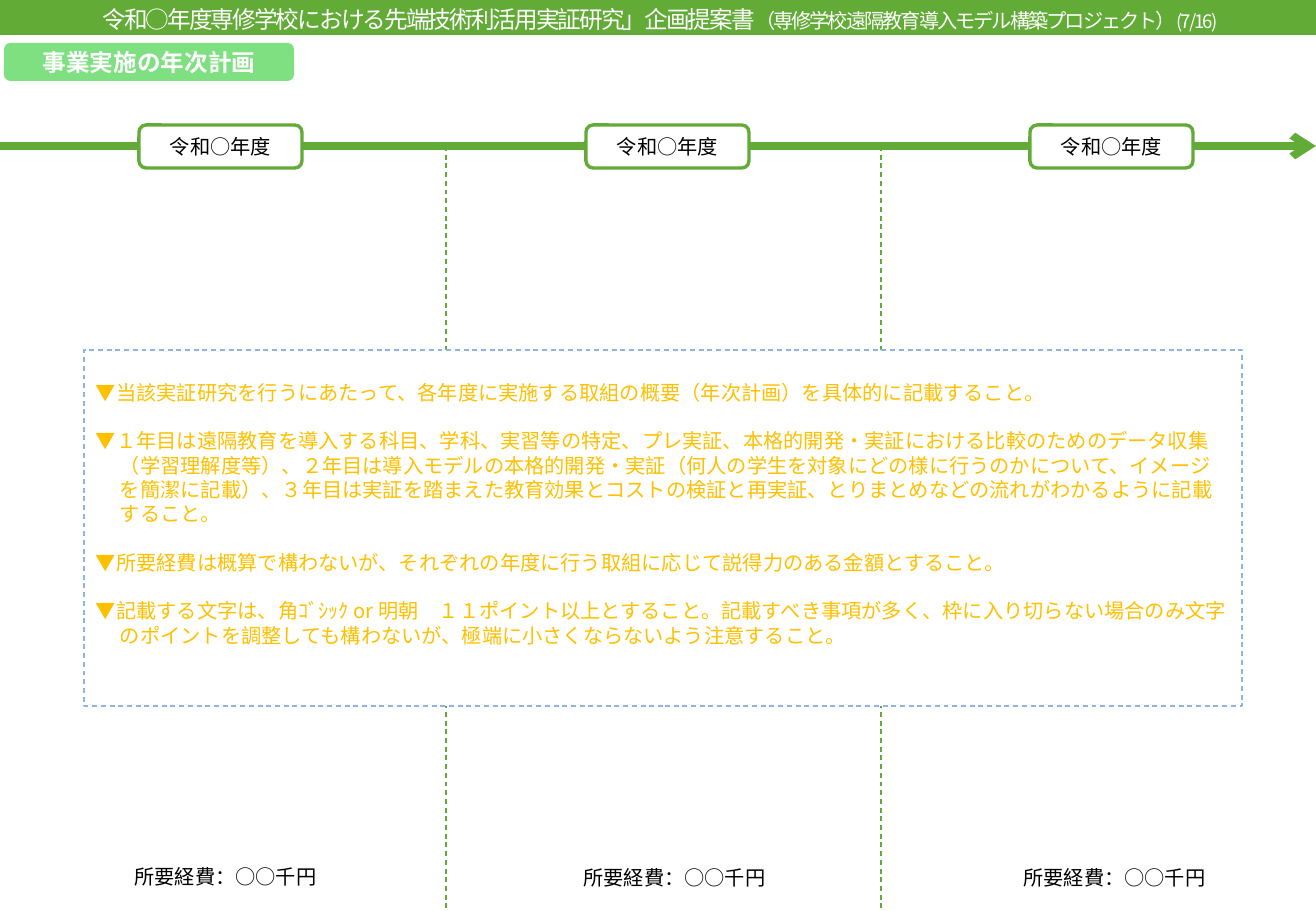
from dataclasses import dataclass

from lxml.etree import SubElement
from pptx import Presentation
from pptx.dml.color import RGBColor
from pptx.enum.dml import MSO_LINE
from pptx.enum.shapes import MSO_CONNECTOR, MSO_SHAPE
from pptx.enum.text import MSO_ANCHOR, PP_ALIGN
from pptx.oxml.ns import qn
from pptx.util import Emu, Pt

PX = 7526
WIDTH, HEIGHT = 1316, 911
AXIS_Y = 146
# left edges of the year label and the cost line, top of the cost line, label font
YEARS = [(139, 4, 858, "Roboto"), (586, 453, 859, "Roboto"),
         (1030, 893, 859, "Noto Sans CJK JP")]
DIVIDERS = [446, 881]
NOTES = [
    "▼当該実証研究を行うにあたって、各年度に実施する取組の概要（年次計画）を具体的に記載すること。",
    "▼１年目は遠隔教育を導入する科目、学科、実習等の特定、プレ実証、本格的開発・実証における比較のためのデータ収集"
    "（学習理解度等）、２年目は導入モデルの本格的開発・実証（何人の学生を対象にどの様に行うのかについて、イメージ"
    "を簡潔に記載）、３年目は実証を踏まえた教育効果とコストの検証と再実証、とりまとめなどの流れがわかるように記載"
    "すること。",
    "▼所要経費は概算で構わないが、それぞれの年度に行う取組に応じて説得力のある金額とすること。",
    "▼記載する文字は、角ｺﾞｼｯｸ or 明朝　１１ポイント以上とすること。記載すべき事項が多く、枠に入り切らない場合のみ"
    "文字のポイントを調整しても構わないが、極端に小さくならないよう注意すること。",
]


@dataclass(frozen=True)
class Theme:
    green: str = "62AB37"
    light_green: str = "7EE081"
    blue: str = "8EB4E3"
    amber: str = "FFC000"
    white: str = "FFFFFF"
    black: str = "000000"
    font: str = "Noto Sans CJK JP"
    label_font: str = "Roboto"
    title: int = 14
    body: int = 12
    small: int = 11
    line_pitch: float = 14.4


def px(n):
    return Emu(n * PX)


def add_run(p, text, *, size, color, font, bold=False, spacing=None):
    r = p.add_run()
    r.text = text
    f = r.font
    f.size, f.bold, f.name = Pt(size), bold, font
    f.color.rgb = RGBColor.from_string(color)
    rpr = r._r.get_or_add_rPr()
    SubElement(rpr, qn("a:ea")).set("typeface", Theme.font)
    if spacing is not None:
        rpr.set("spc", str(round(spacing * 100)))


class Board:
    def __init__(self, slide, theme):
        self.s, self.t = slide, theme

    def _style_line(self, line, color, width, dashed):
        line.color.rgb = RGBColor.from_string(color)
        line.width = Pt(width)
        if dashed:
            line.dash_style = MSO_LINE.DASH

    def _frame(self, sp, anchor=MSO_ANCHOR.MIDDLE):
        tf = sp.text_frame
        tf.word_wrap = True
        tf.vertical_anchor = anchor
        return tf

    def box(self, x, y, w, h, fill, *, kind=MSO_SHAPE.RECTANGLE, line=None, width=1, dashed=False):
        sp = self.s.shapes.add_shape(kind, px(x), px(y), px(w), px(h))
        sp.shadow.inherit = False
        sp.fill.solid()
        sp.fill.fore_color.rgb = RGBColor.from_string(fill)
        if line:
            self._style_line(sp.line, line, width, dashed)
        else:
            sp.line.fill.background()
        return sp

    def label(self, x, y, w, h, text, fill, *, line=None, **fmt):
        sp = self.box(x, y, w, h, fill, kind=MSO_SHAPE.ROUNDED_RECTANGLE, line=line, width=2)
        p = self._frame(sp).paragraphs[0]
        p.alignment = PP_ALIGN.CENTER
        add_run(p, text, **fmt)

    def text(self, x, y, w, h, parts, **fmt):
        """Centred line made of (text, size) parts."""
        sp = self.s.shapes.add_textbox(px(x), px(y), px(w), px(h))
        p = self._frame(sp).paragraphs[0]
        p.alignment = PP_ALIGN.CENTER
        for text, size in parts:
            add_run(p, text, size=size, font=self.t.font, **fmt)

    def line(self, x1, y1, x2, y2, width, *, dashed=False, arrow=False):
        c = self.s.shapes.add_connector(MSO_CONNECTOR.STRAIGHT, px(x1), px(y1), px(x2), px(y2))
        self._style_line(c.line, self.t.green, width, dashed)
        if arrow:
            SubElement(c.line._get_or_add_ln(), qn("a:tailEnd")).set("type", "arrow")
        SubElement(c._element.spPr, qn("a:effectLst"))

    def notes(self, x, y, w, h, items):
        """Dashed box of hanging paragraphs, one line apart."""
        t = self.t
        sp = self.box(x, y, w, h, t.white, line=t.blue, width=0.75, dashed=True)
        tf = self._frame(sp, MSO_ANCHOR.TOP)
        tf.margin_top = px(30)
        for i, item in enumerate(items):
            p = tf.add_paragraph() if i else tf.paragraphs[0]
            p.alignment = PP_ALIGN.LEFT
            p.line_spacing = Pt(t.line_pitch)
            if i:
                p.space_before = Pt(t.line_pitch)
            ppr = p._p.get_or_add_pPr()
            ppr.set("marL", str(px(24)))
            ppr.set("indent", str(-px(24)))
            add_run(p, item, size=t.body, color=t.amber, font=t.font)


def main():
    prs = Presentation()
    prs.slide_width, prs.slide_height = px(WIDTH), px(HEIGHT)
    t = Theme()
    b = Board(prs.slides.add_slide(prs.slide_layouts[6]), t)

    b.box(0, 0, WIDTH, 35, t.green)
    b.text(4, -1, 1312, 41, [
        ("令和○年度専修学校における先端技術利活用実証研究」企画提案書", t.title),
        ("（専修学校遠隔教育導入モデル構築プロジェクト）", t.body),
        ("(7/16)", t.small),
    ], color=t.white, spacing=-1.2)
    b.label(4, 43, 290, 38, "事業実施の年次計画", t.light_green,
            size=t.title, color=t.white, font=t.label_font, bold=True)

    for x in DIVIDERS:
        b.line(x, AXIS_Y, x, HEIGHT, 0.75, dashed=True)
    b.line(0, AXIS_Y, WIDTH, AXIS_Y, 4.5, arrow=True)
    for label_x, cost_x, cost_y, font in YEARS:
        b.label(label_x, 125, 163, 43, "令和○年度", t.white, line=t.green,
                size=t.body, color=t.black, font=font)
        b.text(cost_x, cost_y, 443, 36, [("所要経費：○○千円", t.body)], color=t.black)
    b.notes(84, 350, 1158, 356, NOTES)

    prs.save("out.pptx")


if __name__ == "__main__":
    main()
